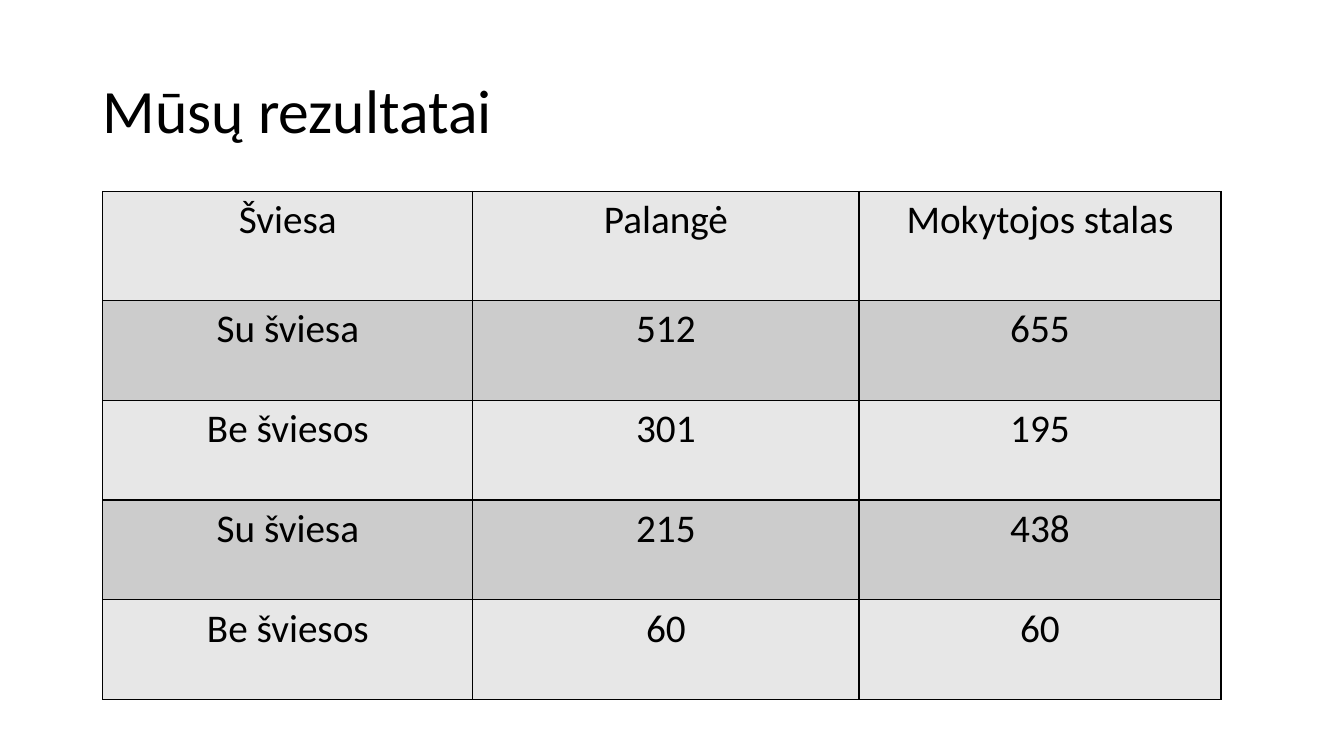
import pptx
import pptx.dml.color
import pptx.enum.text
import pptx.oxml
import pptx.oxml.ns
import pptx.util
from pptx.util import Inches

FONT = "Calibri"
BLACK = "000000"
BAND_FILLS = ["E7E7E7", "CCCCCC"]
RESULTS = [
    ["Šviesa", "Palangė", "Mokytojos stalas"],
    ["Su šviesa", "512", "655"],
    ["Be šviesos", "301", "195"],
    ["Su šviesa", "215", "438"],
    ["Be šviesos", "60", "60"],
]
COLUMN_WIDTHS = [3.67, 3.83, 3.59]
HEADER_HEIGHT = 1.08


def color(hex_value):
    return pptx.dml.color.RGBColor.from_string(hex_value)


def format_text(paragraph, size):
    for run in paragraph.runs:
        run.font.name = FONT
        run.font.size = pptx.util.Pt(size)
        run.font.color.rgb = color(BLACK)


def add_borders(cell):
    properties = cell._tc.get_or_add_tcPr()
    for position, side in enumerate(["lnL", "lnR", "lnT", "lnB"]):
        border = pptx.oxml.parse_xml(
            f'<a:{side} {pptx.oxml.ns.nsdecls("a")} w="12700">'
            f'<a:solidFill><a:srgbClr val="{BLACK}"/></a:solidFill></a:{side}>'
        )
        properties.insert(position, border)


def add_title(slide, left, top, width, height):
    title = slide.shapes.add_textbox(Inches(left), Inches(top), Inches(width), Inches(height))
    frame = title.text_frame
    frame.word_wrap = True
    frame.vertical_anchor = pptx.enum.text.MSO_ANCHOR.MIDDLE
    frame.text = "Mūsų rezultatai"
    heading = frame.paragraphs[0]
    heading.line_spacing = 0.9
    format_text(heading, 44)


def add_results(slide, left, top, width, height):
    results = slide.shapes.add_table(
        len(RESULTS), len(COLUMN_WIDTHS), Inches(left), Inches(top), Inches(width), Inches(height)
    ).table
    for column, share in zip(results.columns, COLUMN_WIDTHS):
        column.width = Inches(width * share / sum(COLUMN_WIDTHS))
    reading_height = (height - HEADER_HEIGHT) / (len(RESULTS) - 1)
    for row_index, readings in enumerate(RESULTS):
        results.rows[row_index].height = Inches(reading_height if row_index else HEADER_HEIGHT)
        for column_index, reading in enumerate(readings):
            cell = results.cell(row_index, column_index)
            cell.fill.solid()
            cell.fill.fore_color.rgb = color(BAND_FILLS[row_index % 2])
            add_borders(cell)
            paragraph = cell.text_frame.paragraphs[0]
            paragraph.text = reading
            paragraph.alignment = pptx.enum.text.PP_ALIGN.CENTER
            format_text(paragraph, 28)
            paragraph.runs[0].font.bold = False


def main():
    presentation = pptx.Presentation()
    presentation.slide_width = Inches(13.33)
    presentation.slide_height = Inches(7.5)
    slide = presentation.slides.add_slide(presentation.slide_layouts[6])
    add_title(slide, 0.92, 0.4, 11.5, 1.45)
    add_results(slide, 1.02, 1.9, 11.09, 5.04)
    presentation.save("out.pptx")


if __name__ == "__main__":
    main()
